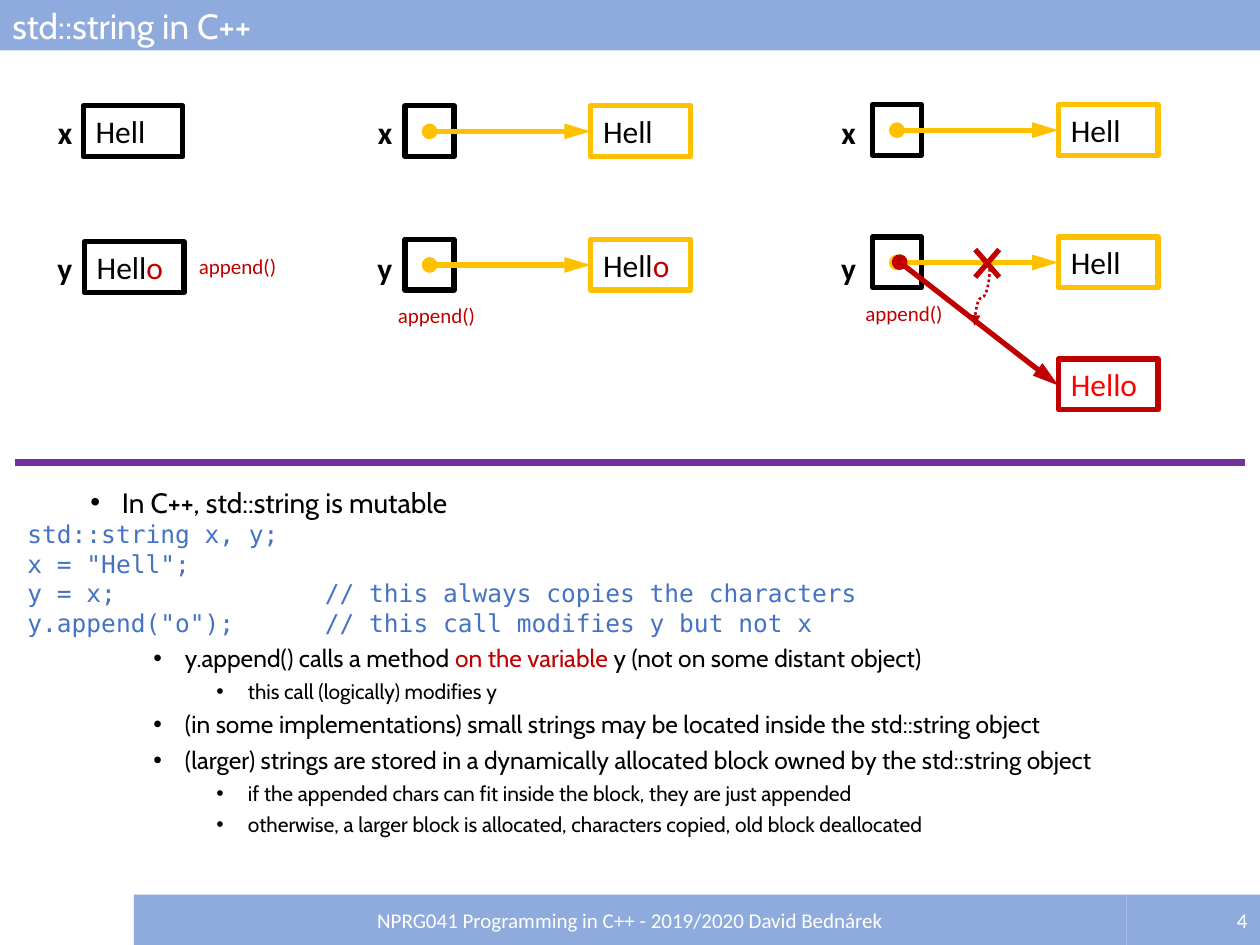
from lxml import etree
from pptx import Presentation
from pptx.dml.color import RGBColor
from pptx.enum.dml import MSO_LINE
from pptx.enum.shapes import MSO_CONNECTOR, MSO_SHAPE
from pptx.enum.text import MSO_ANCHOR, PP_ALIGN
from pptx.oxml.ns import qn
from pptx.util import Pt

RECT = MSO_SHAPE.RECTANGLE
STRAIGHT, CURVE = MSO_CONNECTOR.STRAIGHT, MSO_CONNECTOR.CURVE
LEFT, CENTER, RIGHT = PP_ALIGN.LEFT, PP_ALIGN.CENTER, PP_ALIGN.RIGHT
TOP, MIDDLE = MSO_ANCHOR.TOP, MSO_ANCHOR.MIDDLE
DOTTED = MSO_LINE.ROUND_DOT
BLACK, WHITE, BAR, GOLD, DARK_RED = "000000", "FFFFFF", "8FAADC", "FFC000", "C00000"
RED, PURPLE, CODE_BLUE = "FF0000", "7030A0", "4472C4"
BODY, LABEL, MONO = "Cabin", "Calibri", "DejaVu Sans Mono"
BOX_W, CELL_W, BOX_H = 57, 28, 29


def rgb(value):
    return RGBColor.from_string(value)


def child(parent, tag, **attributes):
    node = etree.SubElement(parent, qn(tag))
    for name, value in attributes.items():
        node.set(name, value)
    return node


class SlideBuilder:
    def __init__(self, slide):
        self.s = slide

    def add_text(self, p, text, size, color, font=LABEL, bold=False):
        r = p.add_run()
        r.text = text
        for name, value in {"size": Pt(size), "name": font, "bold": bold}.items():
            setattr(r.font, name, value)
        r.font.color.rgb = rgb(color)

    def frame(self, sp, anchor):
        tf = sp.text_frame
        for name, value in {"word_wrap": True, "vertical_anchor": anchor}.items():
            setattr(tf, name, value)
        return tf

    def label(self, sp, runs, size, font=LABEL, align=LEFT, anchor=TOP, bold=False):
        p = self.frame(sp, anchor).paragraphs[0]
        p.alignment = align
        for text, color in runs:
            self.add_text(p, text, size, color, font, bold)

    def box(self, x, y, w, h, fill=None, line=None):
        sp = self.s.shapes.add_shape(RECT, Pt(x), Pt(y), Pt(w), Pt(h))
        sp.shadow.inherit = False
        if fill:
            sp.fill.solid()
            sp.fill.fore_color.rgb = rgb(fill)
        else:
            sp.fill.background()
        if line:
            sp.line.color.rgb = rgb(line)
            sp.line.width = Pt(3)
        else:
            sp.line.fill.background()
        return sp

    def bar(self, x, y, w, text, size, font=LABEL, align=LEFT):
        sp = self.box(x, y, w, 28.8, BAR)
        self.label(sp, [(text, WHITE)], size, font, align, MIDDLE)

    def value(self, x, y, line, runs, fill=None):
        self.label(self.box(x, y, BOX_W, BOX_H, fill, line), runs, 18)

    def cell(self, x, y):
        self.box(x, y, CELL_W, BOX_H, line=BLACK)

    def text(self, x, y, w, h, text, size, color, align=LEFT, bold=False):
        sp = self.s.shapes.add_textbox(Pt(x), Pt(y), Pt(w), Pt(h))
        self.label(sp, [(text, color)], size, align=align, bold=bold)

    def line(self, x1, y1, x2, y2, color, width=3, kind=STRAIGHT, dash=None):
        c = self.s.shapes.add_connector(kind, Pt(x1), Pt(y1), Pt(x2), Pt(y2))
        c.line.color.rgb = rgb(color)
        c.line.width = Pt(width)
        if dash:
            c.line.dash_style = dash
        child(c._element.spPr, "a:effectLst")
        return c

    def pointer(self, x1, y1, x2, y2, color):
        c = self.line(x1, y1, x2, y2, color)
        ln = c._element.spPr.find(qn("a:ln"))
        child(ln, "a:headEnd", type="oval")
        child(ln, "a:tailEnd", type="triangle", len="lg")

    def redirect(self, x, y, w, h, color):
        c = self.line(x, y, x + w, y + h, color, 1.5, CURVE, DOTTED)
        spPr = c._element.spPr
        spPr.find(qn("a:xfrm")).set("rot", "5400000")
        child(spPr.find(qn("a:ln")), "a:tailEnd", type="triangle")

    def outline(self, x, y, w, h, items):
        sp = self.s.shapes.add_textbox(Pt(x), Pt(y), Pt(w), Pt(h))
        tf = self.frame(sp, TOP)
        for i, (level, runs) in enumerate(items):
            p = tf.paragraphs[0] if i == 0 else tf.add_paragraph()
            p.alignment = LEFT
            size, font, indent = LEVELS[level]
            p.line_spacing = 0.9 if indent else Pt(16.9)
            p.space_before = Pt(5 if indent else 0)
            pPr = p._p.get_or_add_pPr()
            if indent:
                pPr.set("marL", str(Pt(indent)))
                pPr.set("indent", str(Pt(-18)))
                child(pPr, "a:buFont", typeface="Arial")
                child(pPr, "a:buChar", char="\u2022")
            else:
                child(child(pPr, "a:tabLst"), "a:tab", pos=str(Pt(170)), algn="l")
            for text, color in runs:
                self.add_text(p, text, size, color, font)


LEVELS = {
    "main": (16, BODY, 54),
    "code": (14, MONO, 0),
    "sub": (14, BODY, 90),
    "detail": (12, BODY, 126),
}

OUTLINE = [
    ("main", [("In C++, std::string is mutable", BLACK)]),
    ("code", [("std::string x, y;", CODE_BLUE)]),
    ("code", [('x = "Hell";', CODE_BLUE)]),
    ("code", [("y = x;\t// this always copies the characters", CODE_BLUE)]),
    ("code", [('y.append("o");\t// this call modifies y but not x', CODE_BLUE)]),
    ("sub", [("y.append() calls a method ", BLACK), ("on the variable ", DARK_RED),
             ("y (not on some distant object)", BLACK)]),
    ("detail", [("this call (logically) modifies y", BLACK)]),
    ("sub", [("(in some implementations) small strings may be located inside "
              "the std::string object", BLACK)]),
    ("sub", [("(larger) strings are stored in a dynamically allocated block owned by "
              "the std::string object", BLACK)]),
    ("detail", [("if the appended chars can fit inside the block, they are just appended", BLACK)]),
    ("detail", [("otherwise, a larger block is allocated, characters copied, "
                 "old block deallocated", BLACK)]),
]

HELL = [("Hell", BLACK)]
HELL_O = HELL + [("o", DARK_RED)]

prs = Presentation()
prs.slide_width, prs.slide_height = Pt(720), Pt(540)
b = SlideBuilder(prs.slides.add_slide(prs.slide_layouts[6]))

b.line(8.64, 264.2, 711.36, 264.2, PURPLE, 4)
b.outline(8.64, 275.8, 702.7, 231.8, OUTLINE)
b.bar(0, 0, 720, "std::string in C++", 20, BODY)
b.bar(643.7, 511.2, 76.3, "4", 12, align=RIGHT)
b.bar(76.5, 511.2, 567.2, "NPRG041 Programming in C++ - 2019/2020 David Bedn\u00e1rek", 12, align=CENTER)

for x in (14.4, 197.3, 462.2):
    for name, y in (("x", 60.8), ("y", 138.5)):
        b.text(x, y, 34, BOX_H, name, 18, BLACK, RIGHT, True)

b.value(47.5, 60.5, BLACK, HELL, WHITE)
b.value(48.2, 138.2, BLACK, HELL_O, WHITE)

for cell_x, box_x, y, runs in ((231.5, 337.5, 60.5, HELL), (231.5, 337.5, 136.8, HELL_O),
                               (498.5, 604.8, 59.8, HELL), (498.5, 604.8, 135.4, HELL)):
    b.cell(cell_x, y)
    b.pointer(cell_x + 14, y + 14.6, box_x, y + 14.6, GOLD)
    b.value(box_x, y, GOLD, runs)

b.value(604.8, 205.2, DARK_RED, [("Hello", RED)])
b.pointer(514.1, 149.8, 604.8, 220.3, DARK_RED)
for x1, x2 in ((571, 557.3), (557.3, 571)):
    b.line(x1, 142.6, x2, 158.4, DARK_RED)
b.redirect(545, 165.6, 32.4, 8.6, DARK_RED)

for x, y in ((106.6, 141.1), (220.3, 169.2), (487.4, 168.5)):
    b.text(x, y, 72, 21.6, "append()", 12, DARK_RED)

prs.save("out.pptx")
